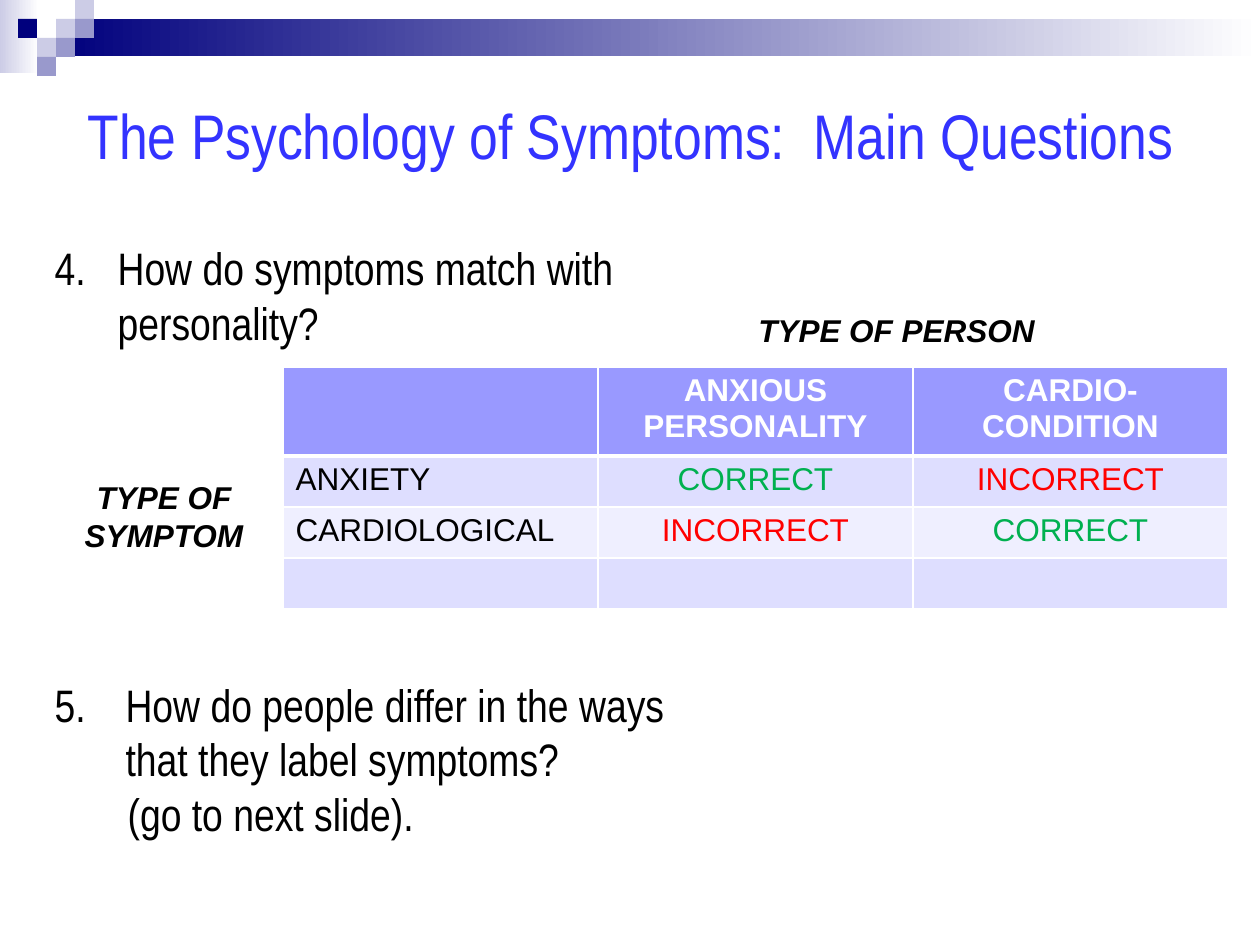
from lxml.etree import SubElement
from pptx import Presentation
from pptx.dml.color import RGBColor
from pptx.enum.shapes import MSO_SHAPE
from pptx.enum.text import MSO_ANCHOR, MSO_AUTO_SIZE, PP_ALIGN
from pptx.oxml.ns import qn
from pptx.util import Pt

SCALE = 914400 / 126
UNIT = 19
NARROW = {"name": "Arial Narrow", "size": Pt(26), "bold": False}
LABEL = {"name": "Arial", "size": Pt(18), "bold": True, "italic": True}
HEAD = {"name": "Arial", "size": Pt(18), "bold": True}
CELL = {"name": "Arial", "size": Pt(18), "bold": False}
SQUARES = [
    (3, 1, "CCCCE6"), (4, 0, "CCCCE6"), (4, 1, "9999CC"), (2, 2, "CCCCE6"),
    (1, 1, "00007D"), (3, 2, "9999CC"), (2, 3, "9999CC"),
]
ITEMS = [
    ("How do symptoms match with personality?", 63, 4, 0),
    ("How do people differ in the ways that they label symptoms?", 71, 5, 187),
    ("(go to next slide).", 73, None, 0),
]
ROWS = [
    ["", "ANXIOUS PERSONALITY", "CARDIO-CONDITION"],
    ["ANXIETY", "CORRECT", "INCORRECT"],
    ["CARDIOLOGICAL", "INCORRECT", "CORRECT"],
    ["", "", ""],
]
HUES = {"CORRECT": "00B050", "INCORRECT": "FF0000"}
FILLS = ["9999FF", "DEDEFF", "EFEFFF", "DEDEFF"]


def px(num):
    return round(num * SCALE)


def paint(color, tone):
    color.rgb = RGBColor.from_string(tone)


def apply(item, form):
    for key, value in form.items():
        setattr(item, key, value)


def place(shape, left, top, width, height):
    apply(shape, {"left": px(left), "top": px(top),
                  "width": px(width), "height": px(height)})


def write(para, text, form, tone, align=PP_ALIGN.LEFT):
    para.alignment = align
    run = para.add_run()
    run.text = text
    apply(run.font, form)
    paint(run.font.color, tone)


def block(slide, box, tones):
    shape = slide.shapes.add_shape(MSO_SHAPE.RECTANGLE, *map(px, box))
    shape.shadow.inherit = False
    shape.line.fill.background()
    if len(tones) == 1:
        shape.fill.solid()
        paint(shape.fill.fore_color, tones[0])
        return
    shape.fill.gradient()
    shape.fill.gradient_angle = 0
    for stop, tone, spot in zip(shape.fill.gradient_stops, tones, (0, 1)):
        stop.position = spot
        paint(stop.color, tone)


def banner(slide):
    block(slide, (0, 0, 39, 73), ["CCCCE6", "FFFFFF"])
    block(slide, (57, 19, 1203, 37), ["00007D", "FFFFFF"])
    for col, row, tone in SQUARES:
        block(slide, ((col - 1) * UNIT + 18, row * UNIT, UNIT, UNIT), [tone])


def title(slide):
    shape = slide.shapes.title
    place(shape, 53, 90, 1155, 88)
    apply(shape.text_frame, {"auto_size": MSO_AUTO_SIZE.NONE, "word_wrap": True,
                             "vertical_anchor": MSO_ANCHOR.MIDDLE})
    write(shape.text_frame.paragraphs[0],
          "The Psychology of Symptoms:  Main Questions",
          NARROW | {"size": Pt(36)}, "3333FF", PP_ALIGN.CENTER)


def bullet(para, left, start):
    props = para._p.get_or_add_pPr()
    props.set("marL", str(px(left)))
    props.set("indent", str(-px(left) if start else 0))
    if start:
        SubElement(props, qn("a:buFont"), typeface="Arial Narrow")
        SubElement(props, qn("a:buAutoNum"), type="arabicPeriod", startAt=str(start))
    else:
        SubElement(props, qn("a:buNone"))


def body(slide):
    shape = slide.placeholders[1]
    place(shape, 42, 234, 661, 619)
    frame = shape.text_frame
    apply(frame, {"auto_size": MSO_AUTO_SIZE.NONE, "word_wrap": True,
                  "vertical_anchor": MSO_ANCHOR.TOP})
    for num, (text, left, start, gap) in enumerate(ITEMS):
        para = frame.add_paragraph() if num else frame.paragraphs[0]
        para.space_before = Pt(gap)
        bullet(para, left, start)
        write(para, text, NARROW, "000000")


def label(slide, box, text, align):
    frame = slide.shapes.add_textbox(*map(px, box)).text_frame
    frame.word_wrap = True
    write(frame.paragraphs[0], text, LABEL, "000000", align)


def edge(cell, side, width):
    line = SubElement(cell._tc.get_or_add_tcPr(), qn("a:ln" + side), w=str(Pt(width)))
    fill = SubElement(line, qn("a:solidFill"))
    SubElement(fill, qn("a:srgbClr"), val="FFFFFF")


def grid(slide):
    box = map(px, (283, 367, 945, 242))
    table = slide.shapes.add_table(len(ROWS), len(ROWS[0]), *box).table
    for row, texts in enumerate(ROWS):
        table.rows[row].height = px(51 if row else 89)
        for col, text in enumerate(texts):
            cell = table.cell(row, col)
            for side in "LRTB":
                thick = (row, side) in ((0, "B"), (1, "T"))
                edge(cell, side, 3 if thick else 1)
            cell.fill.solid()
            paint(cell.fill.fore_color, FILLS[row])
            if text:
                tone = HUES.get(text, "000000") if row else "FFFFFF"
                align = PP_ALIGN.CENTER if col else PP_ALIGN.LEFT
                write(cell.text_frame.paragraphs[0], text,
                      CELL if row else HEAD, tone, align)


def main():
    deck = Presentation()
    apply(deck, {"slide_width": px(1260), "slide_height": px(945)})
    slide = deck.slides.add_slide(deck.slide_layouts[1])
    banner(slide)
    body(slide)
    title(slide)
    grid(slide)
    label(slide, (746, 305, 378, 50), "TYPE OF PERSON", PP_ALIGN.LEFT)
    label(slide, (59, 472, 210, 89), "TYPE OF SYMPTOM", PP_ALIGN.CENTER)
    deck.save("out.pptx")


if __name__ == "__main__":
    main()
